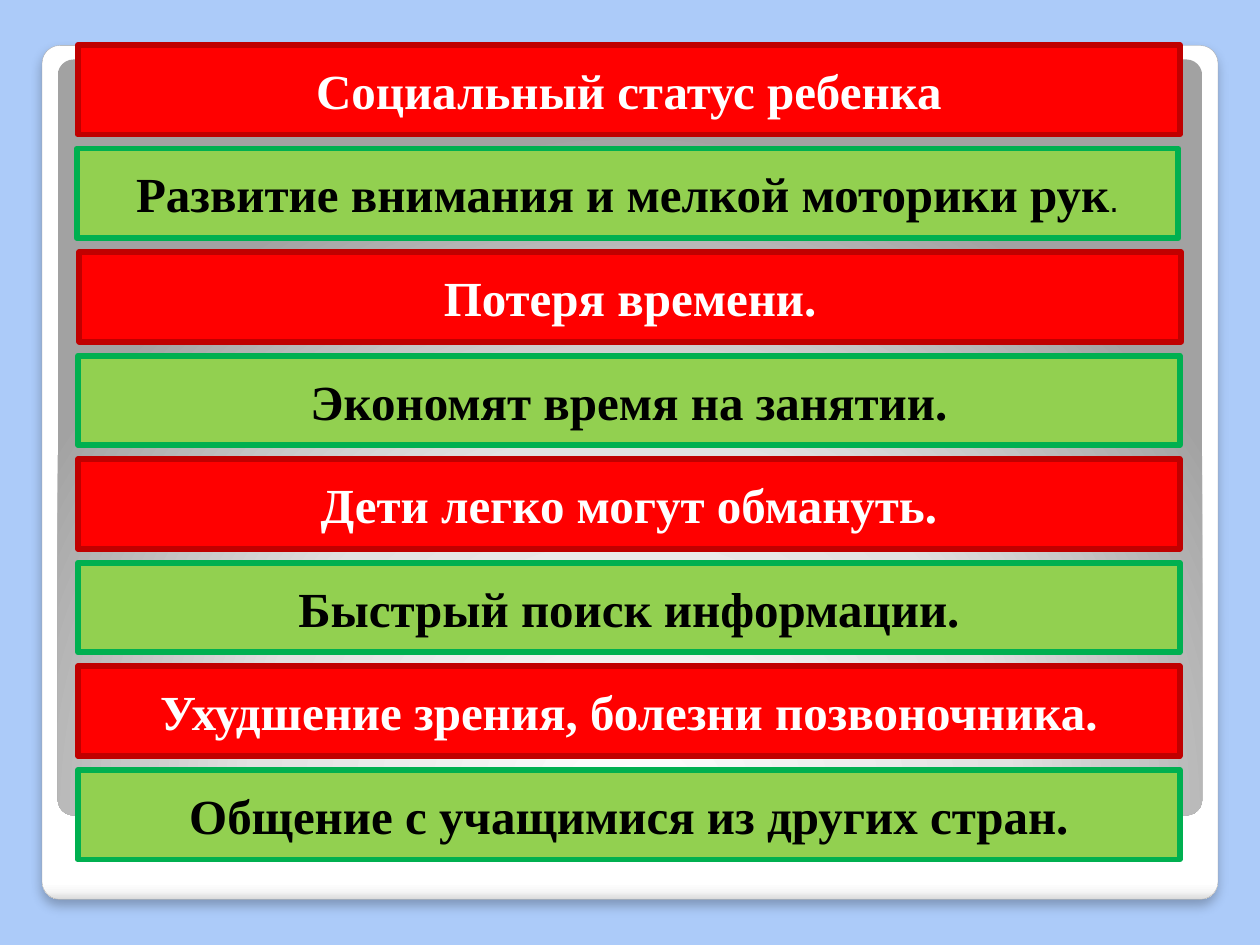
from lxml import etree
from pptx import Presentation
from pptx.dml.color import RGBColor
from pptx.enum.shapes import MSO_SHAPE
from pptx.enum.text import MSO_ANCHOR, PP_ALIGN
from pptx.oxml import parse_xml
from pptx.oxml.ns import qn
from pptx.util import Pt

RECTANGLE = MSO_SHAPE.RECTANGLE
ROUNDED = MSO_SHAPE.ROUNDED_RECTANGLE
MIDDLE = MSO_ANCHOR.MIDDLE
CENTER = PP_ALIGN.CENTER

COLORS = {
    "background": "ACCBF9",
    "frame_line": "A4A4A4",
    "shadow": "000000",
    "con_fill": "FF0000",
    "con_line": "C00000",
    "con_text": "FFFFFF",
    "pro_fill": "92D050",
    "pro_line": "00B050",
    "pro_text": "000000",
}
FRAME_STOPS = [(0, "FFFFFF"), (98, "FFFFFF"), (99, "F7F7F7"), (100, "DADADA")]
PANEL_STOPS = [(0, "FFFFFF"), (55, "E1E1E1"), (100, "A2A2A2")]
DOWNWARD = '<a:lin ang="5400000" scaled="0"/>'
FROM_BELOW = (
    '<a:path path="circle">'
    '<a:fillToRect l="50000" t="175000" r="50000" b="-75000"/></a:path>'
)
DRAWING_NS = 'xmlns:a="http://schemas.openxmlformats.org/drawingml/2006/main"'

# Kind, wording and sideways shift of each bar, from top to bottom
BARS = [
    ("con", "Социальный статус ребенка", 0),
    ("pro", "Развитие внимания и мелкой моторики рук", -0.7),
    ("con", "Потеря времени.", 0.7),
    ("pro", "Экономят время на занятии.", 0),
    ("con", "Дети легко могут обмануть.", 0),
    ("pro", "Быстрый поиск информации.", 0),
    ("con", "Ухудшение зрения, болезни позвоночника.", 0),
    ("pro", "Общение с учащимися из других стран.", 0),
]
BAR_WITH_SMALL_STOP = 1


def rgb(name):
    return RGBColor.from_string(COLORS[name])


def add_box(page, kind, left, top, width, height):
    box = page.shapes.add_shape(kind, Pt(left), Pt(top), Pt(width), Pt(height))
    box.shadow.inherit = False
    return box


def set_gradient(box, stops, direction):
    """Fill the box with (percent, colour) stops."""
    stop_xml = "".join(
        f'<a:gs pos="{percent * 1000}"><a:srgbClr val="{color}"/></a:gs>'
        for percent, color in stops
    )
    gradient = parse_xml(
        f'<a:gradFill {DRAWING_NS} rotWithShape="1">'
        f"<a:gsLst>{stop_xml}</a:gsLst>{direction}</a:gradFill>"
    )
    box._element.spPr.find(qn("a:prstGeom")).addnext(gradient)


def add_drop_shadow(box):
    effects = box._element.spPr.find(qn("a:effectLst"))
    shadow = etree.SubElement(
        effects, qn("a:outerShdw"), blurRad=str(Pt(6)), dist=str(Pt(4)),
        dir="5400000", algn="t", rotWithShape="0",
    )
    color = etree.SubElement(shadow, qn("a:srgbClr"), val=COLORS["shadow"])
    etree.SubElement(color, qn("a:alpha"), val="25000")


def add_backdrop(page, left, top, width, height):
    """White frame with a grey panel inset from its upper edges."""
    inset = 9
    frame = add_box(page, ROUNDED, left, top, width, height)
    panel = add_box(page, ROUNDED, left + inset, top + 8,
                    width - 2 * inset, 432)
    for box, stops, direction in ((frame, FRAME_STOPS, DOWNWARD),
                                  (panel, PANEL_STOPS, FROM_BELOW)):
        box.adjustments[0] = 0.021
        set_gradient(box, stops, direction)
    frame.line.color.rgb = rgb("frame_line")
    frame.line.width = Pt(0.16)
    panel.line.fill.background()
    add_drop_shadow(frame)


def add_bar(page, kind, wording, left, top, width, height):
    bar = add_box(page, RECTANGLE, left, top, width, height)
    bar.fill.solid()
    bar.fill.fore_color.rgb = rgb(f"{kind}_fill")
    bar.line.color.rgb = rgb(f"{kind}_line")
    bar.line.width = Pt(3.35)
    frame = bar.text_frame
    frame.word_wrap = True
    frame.vertical_anchor = MIDDLE
    para = frame.paragraphs[0]
    para.alignment = CENTER
    para.add_run().text = wording
    para.font.name = "Times New Roman"
    para.font.size = Pt(28)
    para.font.bold = True
    para.font.color.rgb = rgb(f"{kind}_text")
    return bar


def add_small_stop(bar):
    span = bar.text_frame.paragraphs[0].add_run()
    span.text = "."
    span.font.name = "DejaVu Sans"
    span.font.size = Pt(18)
    span.font.bold = False


def add_bar_stack(page, left, top, width, height):
    """Alternating red and green bars, spread evenly over the height."""
    bar_height = 51.2
    pitch = (height - bar_height) / (len(BARS) - 1)
    bars = [
        add_bar(page, kind, wording, left + shift, top + row * pitch,
                width, bar_height)
        for row, (kind, wording, shift) in enumerate(BARS)
    ]
    add_small_stop(bars[BAR_WITH_SMALL_STOP])


def main():
    deck = Presentation()
    deck.slide_width, deck.slide_height = Pt(720), Pt(540)
    page = deck.slides.add_slide(deck.slide_layouts[6])
    page.background.fill.solid()
    page.background.fill.fore_color.rgb = rgb("background")
    add_backdrop(page, 24, 26, 672, 488)
    add_bar_stack(page, 44.6, 25.7, 629.5, 465.5)
    deck.save("out.pptx")


if __name__ == "__main__":
    main()
